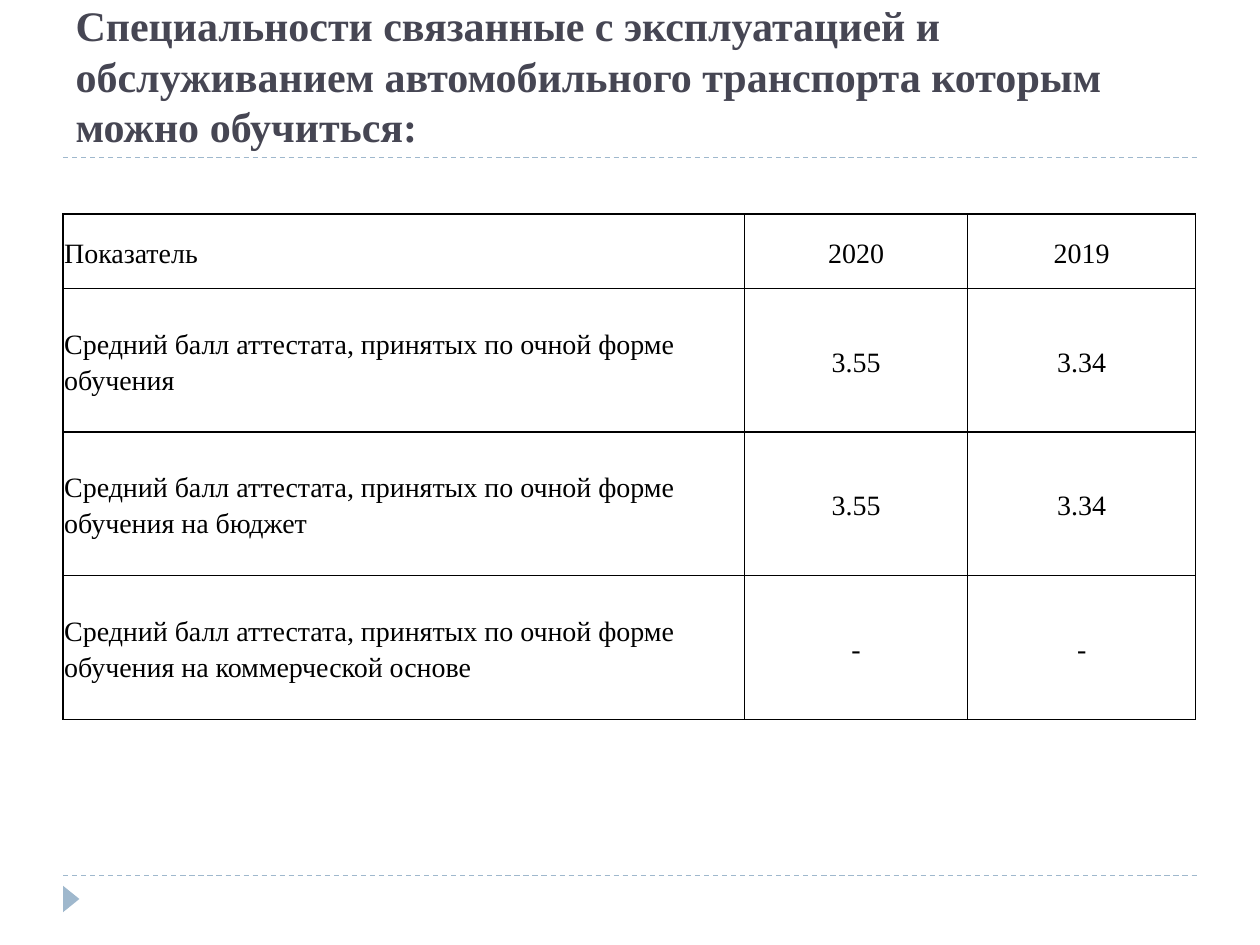
from lxml.etree import SubElement
from pptx import Presentation
from pptx.dml.color import RGBColor
from pptx.enum.dml import MSO_LINE
from pptx.enum.shapes import MSO_CONNECTOR, MSO_SHAPE
from pptx.enum.text import MSO_ANCHOR, MSO_AUTO_SIZE, PP_ALIGN
from pptx.oxml.ns import qn
from pptx.util import Inches, Pt

COLUMNS, ROWS = 20, 30
TITLE = ("Специальности связанные с эксплуатацией и обслуживанием "
         "автомобильного транспорта которым можно обучиться:")
SCORE = "Средний балл аттестата, принятых по очной форме обучения"
RECORDS = [
    ("Показатель", "2020", "2019"),
    (SCORE, "3.55", "3.34"),
    (f"{SCORE} на бюджет", "3.55", "3.34"),
    (f"{SCORE} на коммерческой основе", "-", "-"),
]


def color(value):
    return RGBColor.from_string(value)


def apply(target, values):
    for name, value in values.items():
        setattr(target, name, value)


class SlideBuilder:
    accent, heading, ink = "9FB8CD", "464653", "000000"
    font_name = "Times New Roman"

    def __init__(self, presentation):
        self.column = presentation.slide_width / COLUMNS
        self.row = presentation.slide_height / ROWS
        self.slide = presentation.slides.add_slide(presentation.slide_layouts[5])

    def box(self, left, top, width, height):
        return (round(left * self.column), round(top * self.row),
                round(width * self.column), round(height * self.row))

    def format_text(self, paragraph, text, size, ink, bold, **layout):
        paragraph.text = text
        apply(paragraph, layout)
        apply(paragraph.font, {"name": self.font_name, "size": Pt(size), "bold": bold})
        paragraph.font.color.rgb = color(ink)

    def title(self, text, *place):
        title = self.slide.shapes.title
        apply(title, dict(zip(("left", "top", "width", "height"), self.box(*place))))
        apply(title.text_frame, {"word_wrap": True, "auto_size": MSO_AUTO_SIZE.NONE,
                                 "vertical_anchor": MSO_ANCHOR.BOTTOM})
        self.format_text(title.text_frame.paragraphs[0], text, 24, self.heading, True,
                         alignment=PP_ALIGN.LEFT)

    def rule(self, left, top, width):
        x, y, length, _ = self.box(left, top, width, 0)
        connector = self.slide.shapes.add_connector(
            MSO_CONNECTOR.STRAIGHT, x, y, x + length, y)
        connector.line.color.rgb = color(self.accent)
        apply(connector.line, {"width": Pt(0.75), "dash_style": MSO_LINE.DASH})
        SubElement(connector._element.spPr, qn("a:effectLst"))

    def marker(self, *place):
        shape = self.slide.shapes.add_shape(MSO_SHAPE.ISOSCELES_TRIANGLE, *self.box(*place))
        apply(shape, {"rotation": 90})
        shape.shadow.inherit = False
        shape.fill.solid()
        shape.fill.fore_color.rgb = color(self.accent)
        shape.line.fill.background()

    def border(self, cell):
        properties = cell._tc.get_or_add_tcPr()
        for side in ("lnL", "lnR", "lnT", "lnB"):
            line = SubElement(properties, qn(f"a:{side}"), w=str(Pt(1)))
            fill = SubElement(line, qn("a:solidFill"))
            SubElement(fill, qn("a:srgbClr"), val=self.ink)

    def table(self, records, widths, heights, *place):
        table = self.slide.shapes.add_table(
            len(records), len(widths), *self.box(*place)).table
        apply(table, {"first_row": False, "horz_banding": False})
        for column, width in zip(table.columns, widths):
            column.width = Inches(width)
        for row, height, record in zip(table.rows, heights, records):
            row.height = Inches(height)
            for index, (cell, text) in enumerate(zip(row.cells, record)):
                apply(cell, {f"margin_{side}": Inches(0.01)
                             for side in ("left", "right", "top", "bottom")})
                cell.vertical_anchor = MSO_ANCHOR.MIDDLE
                self.border(cell)
                cell.fill.background()
                self.format_text(
                    cell.text_frame.paragraphs[0], text, 16, self.ink, False,
                    alignment=PP_ALIGN.CENTER if index else PP_ALIGN.LEFT,
                    line_spacing=1.15, space_after=Pt(10))


def main():
    presentation = Presentation()
    apply(presentation, {"slide_width": Inches(10), "slide_height": Inches(7.5)})
    builder = SlideBuilder(presentation)
    for top in (27.8, 5):
        builder.rule(1, top, 18)
    builder.marker(0.92, 28.28, 0.42, 0.52)
    builder.title(TITLE, 1, 1, 18, 4)
    builder.table(RECORDS, (5.41, 1.77, 1.81), (0.59, 1.14, 1.14, 1.14),
                  1, 6.8, 17.98, 16.08)
    presentation.save("out.pptx")


if __name__ == "__main__":
    main()
